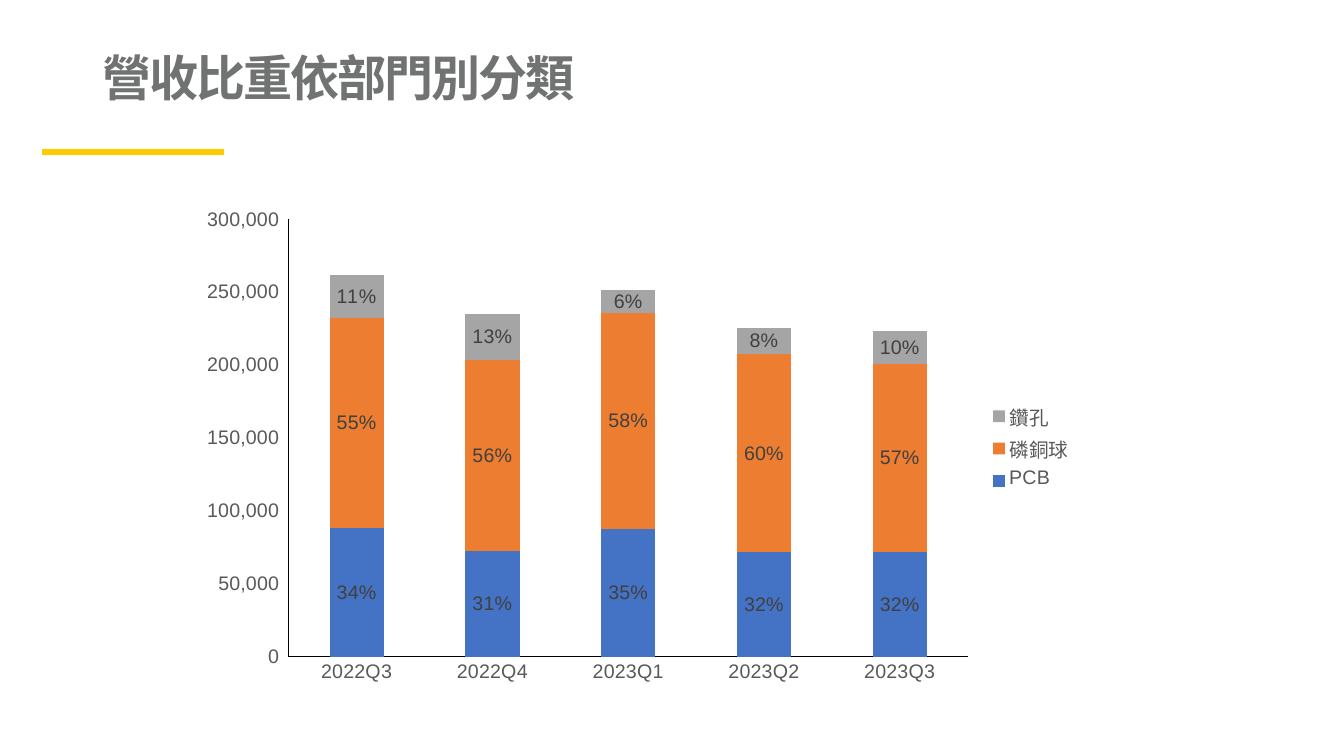
from lxml import etree
from pptx import Presentation
from pptx.chart.data import CategoryChartData
from pptx.dml.color import RGBColor
from pptx.enum.chart import XL_CHART_TYPE, XL_LABEL_POSITION, XL_LEGEND_POSITION, XL_TICK_MARK
from pptx.enum.text import MSO_ANCHOR, MSO_AUTO_SIZE, PP_ALIGN
from pptx.oxml import parse_xml
from pptx.oxml.ns import nsdecls, qn
from pptx.util import Inches, Pt

FACE = "Arial"
BLACK = RGBColor(0x00, 0x00, 0x00)
TITLE = RGBColor(0x70, 0x73, 0x72)
GOLD = RGBColor(0xFF, 0xCC, 0x00)
AXIS = RGBColor(0x59, 0x59, 0x59)
LABEL = RGBColor(0x40, 0x40, 0x40)
BLUE = RGBColor(0x44, 0x72, 0xC4)
ORANGE = RGBColor(0xED, 0x7D, 0x31)
GRAY = RGBColor(0xA5, 0xA5, 0xA5)

NUMBER = r"#,##0_);[Red]\(#,##0\)"
QUARTERS = ["2022Q3", "2022Q4", "2023Q1", "2023Q2", "2023Q3"]
UNITS = [
    ("PCB", BLUE, [88450, 72409, 87735, 71778, 71999], [34, 31, 35, 32, 32]),
    ("磷銅球", ORANGE, [143645, 131384, 147793, 135664, 128455], [55, 56, 58, 60, 57]),
    ("鑽孔", GRAY, [29807, 30956, 15841, 18111, 22577], [11, 13, 6, 8, 10]),
]


def style(font, size, color):
    font.name = FACE
    font.size = Pt(size)
    font.color.rgb = color


def add_title(slide, left, top, width, height):
    title = slide.shapes.title
    title.left, title.top = Inches(left), Inches(top)
    title.width, title.height = Inches(width), Inches(height)
    frame = title.text_frame
    frame.text = "營收比重依部門別分類"
    frame.word_wrap = True
    frame.auto_size = MSO_AUTO_SIZE.NONE
    frame.vertical_anchor = MSO_ANCHOR.MIDDLE
    frame.margin_bottom = Inches(0.7)
    para = frame.paragraphs[0]
    para.alignment = PP_ALIGN.LEFT
    para.line_spacing = 0.9
    font = para.runs[0].font
    style(font, 35, TITLE)
    font.bold = True
    para.runs[0]._r.get_or_add_rPr().set("spc", "-150")


def add_rule(slide, left, top, width):
    rule = slide.shapes.add_connector(
        1, Inches(left), Inches(top), Inches(left + width), Inches(top))
    rule.line.color.rgb = GOLD
    rule.line.width = Pt(4.5)
    etree.SubElement(rule._element.spPr, qn("a:effectLst"))


def style_axis(axis):
    axis.has_major_gridlines = False
    axis.major_tick_mark = XL_TICK_MARK.NONE
    axis.minor_tick_mark = XL_TICK_MARK.NONE
    axis.format.line.color.rgb = BLACK
    axis.format.line.width = Pt(0.75)
    style(axis.tick_labels.font, 14, AXIS)


def style_series(series, color, shares):
    series.format.fill.solid()
    series.format.fill.fore_color.rgb = color
    labels = series.data_labels
    labels.show_value = True
    labels.position = XL_LABEL_POSITION.CENTER
    labels.number_format = NUMBER
    labels.number_format_is_linked = False
    style(labels.font, 14, LABEL)
    for index, share in enumerate(shares):
        label = series.points[index].data_label
        label.text_frame.text = f"{share}%"
        style(label.text_frame.paragraphs[0].runs[0].font, 14, LABEL)
        label.position = XL_LABEL_POSITION.CENTER


def place_plot(chart, left, top, width, height):
    area = chart._chartSpace.chart.plotArea
    for old in area.findall(qn("c:layout")):
        area.remove(old)
    area.insert(0, parse_xml(
        f'<c:layout {nsdecls("c")}><c:manualLayout><c:layoutTarget val="inner"/>'
        '<c:xMode val="edge"/><c:yMode val="edge"/>'
        f'<c:x val="{left}"/><c:y val="{top}"/><c:w val="{width}"/><c:h val="{height}"/>'
        '</c:manualLayout></c:layout>'))


def add_sales(slide, left, top, width, height):
    data = CategoryChartData(number_format=NUMBER)
    data.categories = QUARTERS
    for name, _, values, _ in UNITS:
        data.add_series(name, values)
    chart = slide.shapes.add_chart(
        XL_CHART_TYPE.COLUMN_STACKED, Inches(left), Inches(top),
        Inches(width), Inches(height), data).chart
    style(chart.font, 14, BLACK)
    chart.has_title = False
    chart.has_legend = True
    chart.legend.position = XL_LEGEND_POSITION.RIGHT
    chart.legend.include_in_layout = False
    style(chart.legend.font, 14, AXIS)
    for axis in (chart.category_axis, chart.value_axis):
        style_axis(axis)
    scale = chart.value_axis
    scale.minimum_scale, scale.maximum_scale, scale.major_unit = 0, 300000, 50000
    scale.tick_labels.number_format = NUMBER
    scale.tick_labels.number_format_is_linked = False
    plot = chart.plots[0]
    plot.gap_width, plot.overlap = 150, 100
    plot.vary_by_categories = False
    for series, (_, color, _, shares) in zip(plot.series, UNITS):
        style_series(series, color, shares)
    place_plot(chart, 0.11, 0.04, 0.76, 0.89)


def main():
    deck = Presentation()
    deck.slide_width, deck.slide_height = Inches(13.33), Inches(7.5)
    slide = deck.slides.add_slide(deck.slide_layouts[5])
    add_title(slide, 0.92, 0.4, 11.5, 1.45)
    add_rule(slide, 0.42, 1.51, 1.8)
    add_sales(slide, 1.89, 1.98, 8.86, 4.88)
    deck.save("out.pptx")


if __name__ == "__main__":
    main()
